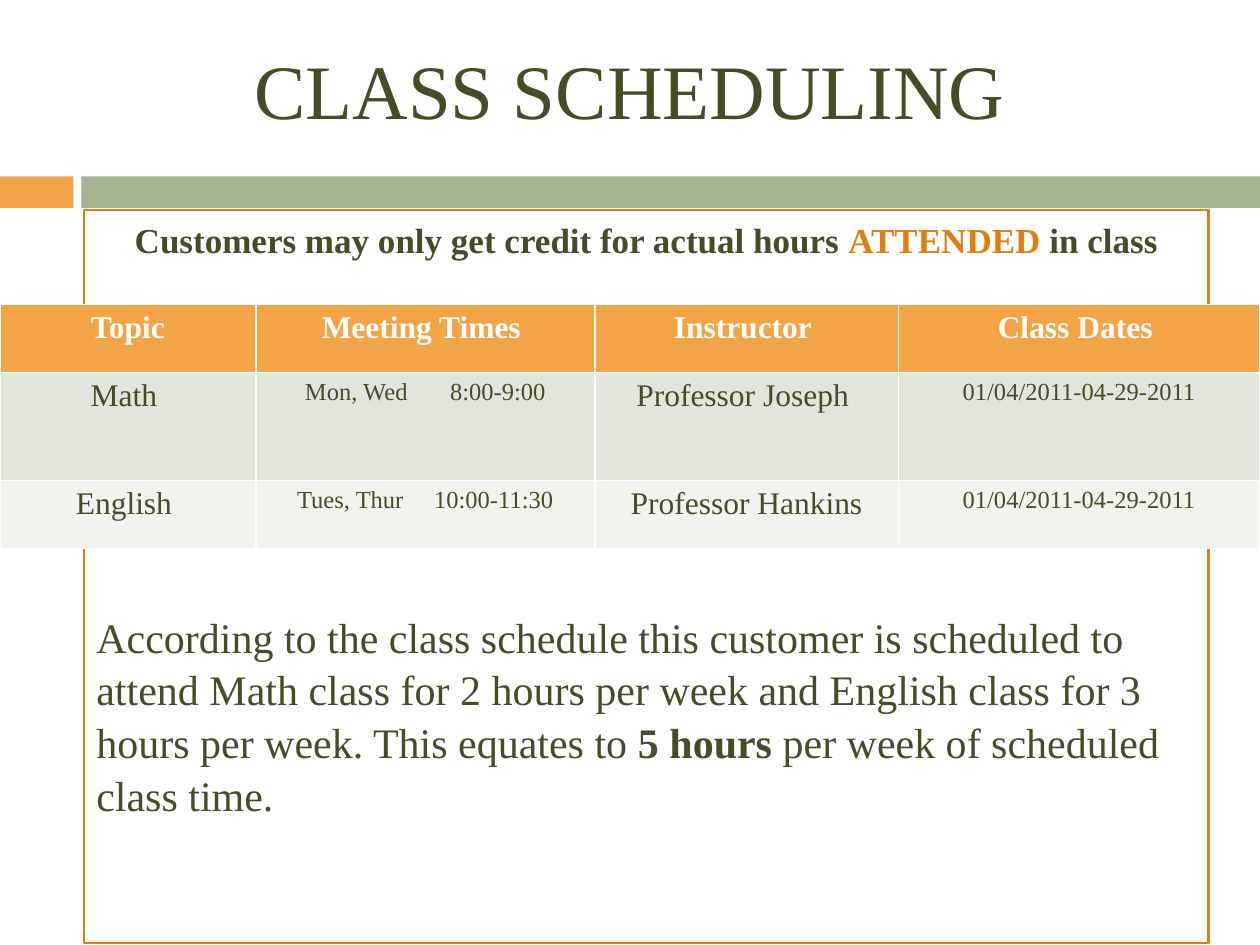
import pptx
import pptx.dml.color
import pptx.enum.shapes
import pptx.enum.text
import pptx.oxml.ns
import pptx.util
from lxml import etree

Pt = pptx.util.Pt
ALIGN = pptx.enum.text.PP_ALIGN
ANCHOR = pptx.enum.text.MSO_ANCHOR
FONT = "Times New Roman"
COLORS = {
    "text": "444D26",
    "accent": "DD7E0E",
    "orange": "F3A447",
    "green": "A5B592",
    "row_dark": "E1E5DC",
    "row_light": "F0F3EE",
    "white": "FFFFFF",
}
COLUMN_WIDTHS = [146.2, 193.7, 173.5, 206.6]
HEADINGS = ["Topic", "Meeting Times ", "Instructor ", "Class Dates "]
CLASSES = [
    ["Math ", "Mon, Wed\t8:00-9:00", "Professor Joseph ", "01/04/2011-04-29-2011"],
    ["English ", "Tues, Thur\t10:00-11:30", "Professor Hankins", "01/04/2011-04-29-2011"],
]
ROW_HEIGHTS = [38.9, 61.7, 38.9]
CELL_SIZES = [18, 14, 18, 14]
TIME_INDENTS = [28.1, 23.6]
TIME_TABS = [82.9, 78.3]


def rgb(name):
    return pptx.dml.color.RGBColor.from_string(COLORS[name])


def add_text(paragraph, text, size=24, color="text", bold=False, align=ALIGN.LEFT):
    paragraph.alignment = align
    run = paragraph.add_run()
    run.text = text
    run.font.name = FONT
    run.font.size = Pt(size)
    run.font.bold = bold
    run.font.color.rgb = rgb(color)


def add_rectangle(slide, left, top, width, height, fill=None, line=None):
    shape = slide.shapes.add_shape(
        pptx.enum.shapes.MSO_SHAPE.RECTANGLE, Pt(left), Pt(top), Pt(width), Pt(height))
    shape.shadow.inherit = False
    if fill:
        shape.fill.solid()
        shape.fill.fore_color.rgb = rgb(fill)
    else:
        shape.fill.background()
    if line:
        shape.line.color.rgb = rgb(line)
        shape.line.width = Pt(1.5)
    else:
        shape.line.fill.background()
    return shape


def add_title(slide, text):
    frame = slide.shapes.add_textbox(Pt(0), Pt(0), Pt(720), Pt(102)).text_frame
    frame.word_wrap = True
    frame.vertical_anchor = ANCHOR.MIDDLE
    add_text(frame.paragraphs[0], text, size=44, align=ALIGN.CENTER)


def add_explanation(slide):
    frame = add_rectangle(slide, 48, 120, 642.5, 419, line="accent").text_frame
    frame.word_wrap = True
    frame.vertical_anchor = ANCHOR.TOP
    heading = frame.paragraphs[0]
    for text, color in [
        ("Customers may only get credit for actual hours ", "text"),
        ("ATTENDED ", "accent"),
        ("in class", "text"),
    ]:
        add_text(heading, text, size=20, color=color, bold=True, align=ALIGN.CENTER)
    body = frame.add_paragraph()
    body.space_before = Pt(199)
    for text, bold in [
        ("According to the class schedule this customer is scheduled to attend Math class "
         "for 2 hours per week and English class for 3 hours per week. This equates to ", False),
        ("5 hours ", True),
        ("per week of scheduled class time.", False),
    ]:
        add_text(body, text, bold=bold)
    for paragraph in frame.paragraphs:
        paragraph.line_spacing = 1.05


def add_tab_stop(paragraph, position):
    properties = paragraph._p.get_or_add_pPr()
    tabs = etree.SubElement(properties, pptx.oxml.ns.qn("a:tabLst"))
    etree.SubElement(tabs, pptx.oxml.ns.qn("a:tab"), pos=str(Pt(position)), algn="l")


def fill_cell(cell, text, fill, **text_format):
    cell.fill.solid()
    cell.fill.fore_color.rgb = rgb(fill)
    add_text(cell.text_frame.paragraphs[0], text, **text_format)


def add_schedule(slide):
    table = slide.shapes.add_table(
        len(ROW_HEIGHTS), len(COLUMN_WIDTHS), Pt(0), Pt(174),
        Pt(sum(COLUMN_WIDTHS)), Pt(sum(ROW_HEIGHTS))).table
    for column, width in zip(table.columns, COLUMN_WIDTHS):
        column.width = Pt(width)
    for row, height in zip(table.rows, ROW_HEIGHTS):
        row.height = Pt(height)
    for column, heading in enumerate(HEADINGS):
        fill_cell(table.cell(0, column), heading, "orange",
                  size=18, color="white", bold=True, align=ALIGN.CENTER)
    for row, (values, fill) in enumerate(zip(CLASSES, ["row_dark", "row_light"]), 1):
        for column, (value, size) in enumerate(zip(values, CELL_SIZES)):
            align = ALIGN.LEFT if "\t" in value else ALIGN.CENTER
            fill_cell(table.cell(row, column), value, fill, size=size, align=align)
        times = table.cell(row, 1)
        times.margin_left = Pt(TIME_INDENTS[row - 1])
        add_tab_stop(times.text_frame.paragraphs[0], TIME_TABS[row - 1])


def main():
    presentation = pptx.Presentation()
    presentation.slide_width = Pt(720)
    presentation.slide_height = Pt(540)
    slide = presentation.slides.add_slide(presentation.slide_layouts[6])
    add_rectangle(slide, 0, 100.8, 42, 18, fill="orange")
    add_rectangle(slide, 46.5, 100.8, 673.5, 18, fill="green")
    add_title(slide, "CLASS SCHEDULING")
    add_explanation(slide)
    add_schedule(slide)
    presentation.save("out.pptx")


if __name__ == "__main__":
    main()
